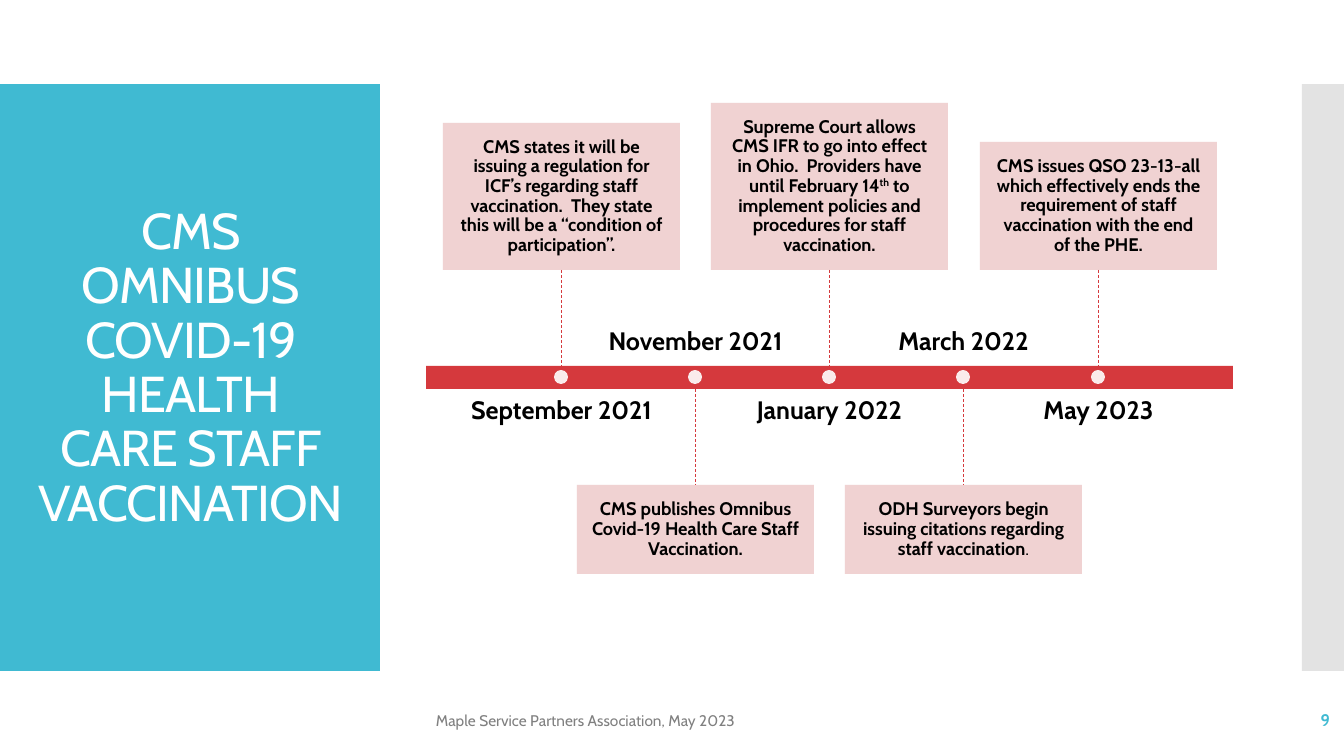
"""Build a slide with a five-step timeline of the staff vaccination rules."""
from lxml import etree
from pptx import Presentation
from pptx.dml.color import RGBColor
from pptx.enum.dml import MSO_LINE
from pptx.enum.shapes import MSO_CONNECTOR, MSO_SHAPE
from pptx.enum.text import MSO_ANCHOR as ANCHOR, PP_ALIGN as ALIGN
from pptx.oxml.ns import qn
from pptx.util import Pt

PX = 914400 / 100.8
WHITE = RGBColor(0xFF, 0xFF, 0xFF)
BLACK = RGBColor(0x00, 0x00, 0x00)
TEAL = RGBColor(0x40, 0xBA, 0xD2)
RED = RGBColor(0xD5, 0x39, 0x3D)
PINK = RGBColor(0xEF, 0xCE, 0xCE)
SILVER = RGBColor(0xC8, 0xC8, 0xC8)
GRAY = RGBColor(0x80, 0x80, 0x80)


def add_block(kind, x, y, w, h, color, opacity=100):
    sp = s.shapes.add_shape(kind, *[round(v * PX) for v in (x, y, w, h)])
    sp.shadow.inherit = False
    sp.fill.solid()
    sp.fill.fore_color.rgb = color
    sp.line.fill.background()
    if opacity < 100:
        clr = sp._element.spPr.find(qn("a:solidFill"))[0]
        etree.SubElement(clr, qn("a:alpha"), val=str(opacity * 1000))
    return sp


def write(sp, runs, size, color, bold, align, anchor, inset=None, spacing=0.9):
    tf = sp.text_frame
    tf.word_wrap = True
    tf.vertical_anchor = anchor
    if inset is not None:
        tf.margin_left = tf.margin_right = round(inset * PX)
        tf.margin_top = tf.margin_bottom = round(inset * PX)
    p = tf.paragraphs[0]
    p.alignment, p.line_spacing = align, spacing
    p.font.name, p.font.size, p.font.bold = "Cabin", Pt(size), bold
    p.font.color.rgb = color
    for text, props in runs:
        r = p.add_run()
        r.text = text
        for key, value in props.items():
            r._r.get_or_add_rPr().set(key, value)


prs = Presentation()
prs.slide_width, prs.slide_height = round(1344 * PX), round(756 * PX)
s = prs.slides.add_slide(prs.slide_layouts[6])

add_block(MSO_SHAPE.RECTANGLE, 0, 84, 380, 587, TEAL)
add_block(MSO_SHAPE.RECTANGLE, 1302, 84, 42, 587, SILVER, 50)
add_block(MSO_SHAPE.RECTANGLE, 426, 366, 807, 23, RED)

title = s.shapes.add_textbox(*[round(v * PX) for v in (28, 124, 325, 507)])
write(title, [("CMS OMNIBUS COVID-19 HEALTH CARE STAFF VACCINATION", {"spc": "-60"})],
      36, WHITE, False, ALIGN.CENTER, ANCHOR.MIDDLE)
title.text_frame.margin_bottom = round(22 * PX)

events = [
    ("September 2021", 123, 147, [
        ("CMS states it will be issuing a regulation for ICF’s regarding staff vaccination.  "
         "They state this will be a “condition of participation”.", {})]),
    ("November 2021", 485, 89, [
        ("CMS publishes Omnibus Covid-19 Health Care Staff Vaccination.", {})]),
    ("January 2022", 103, 167, [
        ("Supreme Court allows CMS IFR to go into effect in Ohio.  "
         "Providers have until February 14", {}),
        ("th", {"baseline": "30000"}),
        (" to implement policies and procedures for staff vaccination.", {})]),
    ("March 2022", 485, 89, [
        ("ODH Surveyors begin issuing citations regarding staff vaccination", {}),
        (".", {"b": "0"})]),
    ("May 2023", 142, 128, [
        ("CMS issues QSO 23-13-all which effectively ends the requirement of staff "
         "vaccination with the end of the PHE.", {})]),
]

for i, (date, top, height, runs) in enumerate(events):
    x = 561 + i * 537 // 4
    above = i % 2 == 0

    box = add_block(MSO_SHAPE.RECTANGLE, x - 118, top, 237, height, PINK, 90)
    write(box, runs, 13, BLACK, True, ALIGN.CENTER, ANCHOR.MIDDLE, 14)

    y1, y2 = (270, 366) if above else (389, 485)
    cn = s.shapes.add_connector(MSO_CONNECTOR.STRAIGHT,
                                *[round(v * PX) for v in (x, y1, x, y2)])
    cn.line.color.rgb = RED
    cn.line.width = Pt(0.5)
    cn.line.dash_style = MSO_LINE.DASH
    etree.SubElement(cn._element.spPr, qn("a:effectLst"))

    add_block(MSO_SHAPE.OVAL, x - 7, 370, 14, 14, WHITE, 90)

    label = s.shapes.add_textbox(
        *[round(v * PX) for v in (x - 107, 398 if above else 292, 215, 64)])
    write(label, [(date, {})], 18, BLACK, True, ALIGN.CENTER,
          ANCHOR.TOP if above else ANCHOR.BOTTOM, 0)

footer = s.shapes.add_textbox(*[round(v * PX) for v in (426, 700, 651, 40)])
write(footer, [("Maple Service Partners Association, May 2023", {})],
      11, GRAY, False, ALIGN.LEFT, ANCHOR.MIDDLE, spacing=1.0)
number = s.shapes.add_textbox(*[round(v * PX) for v in (1172, 700, 168, 40)])
write(number, [("9", {})], 12, TEAL, True, ALIGN.RIGHT, ANCHOR.MIDDLE, spacing=1.0)

prs.save("out.pptx")
